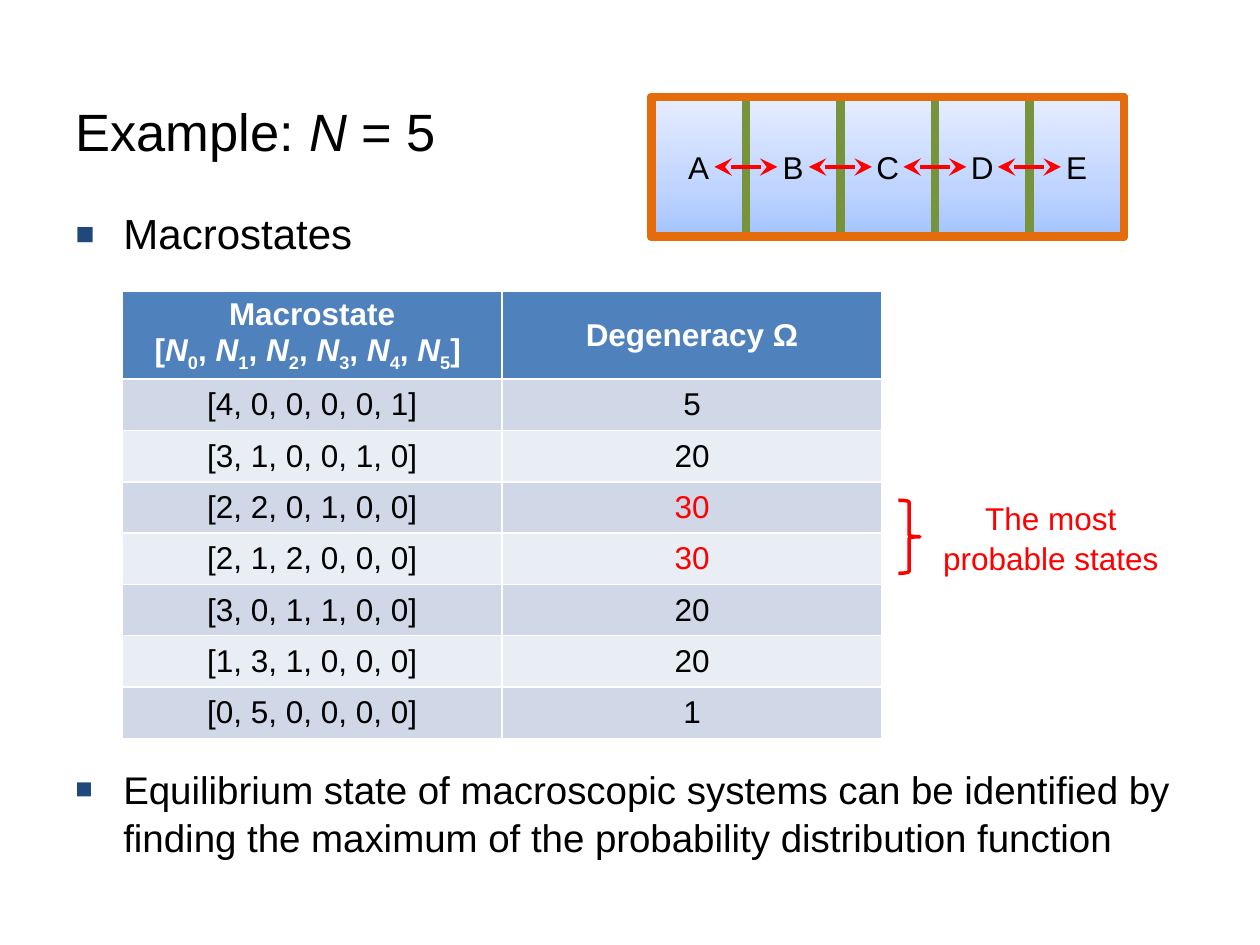
from copy import deepcopy
from dataclasses import dataclass

from lxml import etree
from pptx import Presentation
from pptx import util as u
from pptx.dml.color import RGBColor
from pptx.enum import shapes, text
from pptx.oxml import ns


@dataclass(frozen=True)
class Theme:
    font: str = "Arial"
    ink: str = "000000"
    white: str = "FFFFFF"
    accent: str = "FF0000"
    bullet: str = "1F497D"
    wall: str = "77933C"
    frame: str = "E46C0A"
    header: str = "4F81BD"
    bands: tuple = ("D0D8E8", "E9EDF4")
    gradient: tuple = ((0, "A4C4FF"), (0.35, "BFD4FF"), (1, "E6EEFF"))
    title_size: int = 30
    list_size: int = 24
    conclusion_size: int = 22
    label_size: int = 18
    wall_width: int = 5
    stroke_width: int = 2


def rgb(value):
    return RGBColor.from_string(value)


def add_element(parent, tag, **attributes):
    return etree.SubElement(parent, ns.qn(tag), **attributes)


class SlideBuilder:
    columns, rows = 100, 75

    def __init__(self, presentation, theme):
        self.theme = theme
        self.column = presentation.slide_width / self.columns
        self.row = presentation.slide_height / self.rows
        self.slide = presentation.slides.add_slide(presentation.slide_layouts[1])

    def box(self, left, top, width, height):
        return (u.Emu(round(left * self.column)), u.Emu(round(top * self.row)),
                u.Emu(round(width * self.column)), u.Emu(round(height * self.row)))

    def place(self, shape, area):
        shape.left, shape.top, shape.width, shape.height = self.box(*area)

    def format(self, paragraph, size, color=None, bold=False, align=text.PP_ALIGN.CENTER):
        paragraph.alignment = align
        for run in paragraph.runs:
            run.font.name = self.theme.font
            run.font.size = u.Pt(size)
            run.font.bold = bold
            run.font.color.rgb = rgb(color or self.theme.ink)

    def add_runs(self, paragraph, pieces):
        for piece in pieces:
            run = paragraph.add_run()
            run.text = piece
            run.font.italic = piece == "N"
            if piece.isdigit():
                run.font._element.set("baseline", "-25000")

    def title(self, area, pieces):
        shape = self.slide.shapes.title
        self.place(shape, area)
        frame = shape.text_frame
        frame.auto_size = text.MSO_AUTO_SIZE.NONE
        frame.vertical_anchor = text.MSO_ANCHOR.MIDDLE
        self.add_runs(frame.paragraphs[0], pieces)
        self.format(frame.paragraphs[0], self.theme.title_size, align=text.PP_ALIGN.LEFT)

    def bullet(self, shape, content, size):
        frame = shape.text_frame
        frame.word_wrap = True
        frame.auto_size = text.MSO_AUTO_SIZE.NONE
        frame.text = content
        paragraph = frame.paragraphs[0]
        paragraph.space_before = u.Pt(0)
        properties = paragraph._p.get_or_add_pPr()
        properties.set("marL", str(u.Inches(0.38)))
        properties.set("indent", str(-u.Inches(0.38)))
        color = add_element(properties, "a:buClr")
        add_element(color, "a:srgbClr", val=self.theme.bullet)
        add_element(properties, "a:buSzPct", val="75000")
        add_element(properties, "a:buFont", typeface=self.theme.font)
        add_element(properties, "a:buChar", char="■")
        self.format(paragraph, size, align=text.PP_ALIGN.LEFT)
        return paragraph

    def body(self, area, content):
        shape = self.slide.placeholders[1]
        self.place(shape, area)
        self.bullet(shape, content, self.theme.list_size)

    def conclusion(self, area, content):
        shape = self.slide.shapes.add_textbox(*self.box(*area))
        self.bullet(shape, content, self.theme.conclusion_size).line_spacing = 1.05

    def caption(self, area, content):
        frame = self.slide.shapes.add_textbox(*self.box(*area)).text_frame
        frame.word_wrap = True
        frame.text = content
        frame.paragraphs[0].line_spacing = 1.05
        self.format(frame.paragraphs[0], self.theme.label_size, self.theme.accent)

    def outline(self, kind, area, color, width):
        shape = self.slide.shapes.add_shape(kind, *self.box(*area))
        shape.shadow.inherit = False
        shape.fill.background()
        shape.line.color.rgb = rgb(color)
        shape.line.width = u.Pt(width)
        return shape

    def compartment(self, area, label):
        theme = self.theme
        shape = self.outline(shapes.MSO_SHAPE.RECTANGLE, area, theme.wall, theme.wall_width)
        shape.fill.gradient()
        shape.fill.gradient_angle = 90
        stops = shape._element.spPr.find(".//" + ns.qn("a:gsLst"))
        stops.append(deepcopy(stops[0]))
        for stop, (position, color) in zip(shape.fill.gradient_stops, theme.gradient):
            stop.position = position
            stop.color.rgb = rgb(color)
        frame = shape.text_frame
        frame.vertical_anchor = text.MSO_ANCHOR.MIDDLE
        frame.text = label
        self.format(frame.paragraphs[0], theme.label_size)

    def exchange_arrow(self, left, top, width):
        start_x, start_y, length, _ = self.box(left, top, width, 0)
        arrow = self.slide.shapes.add_connector(
            shapes.MSO_CONNECTOR.STRAIGHT, start_x, start_y, start_x + length, start_y)
        arrow.line.color.rgb = rgb(self.theme.accent)
        arrow.line.width = u.Pt(self.theme.stroke_width)
        line = arrow.line._get_or_add_ln()
        for end in ("a:headEnd", "a:tailEnd"):
            add_element(line, end, type="stealth", w="lg", len="lg")
        add_element(arrow._element.spPr, "a:effectLst")

    def chambers(self, area, labels):
        left, top, width, height = area
        pitch = width / len(labels)
        for index, label in enumerate(labels):
            self.compartment((left + index * pitch, top, pitch, height), label)
        for index in range(1, len(labels)):
            self.exchange_arrow(left + index * pitch - 2.5, top + height / 2, 5)
        self.outline(shapes.MSO_SHAPE.RECTANGLE, area, self.theme.frame, self.theme.wall_width)

    def fill_cell(self, cell, fill, color, bold=False):
        cell.fill.solid()
        cell.fill.fore_color.rgb = rgb(fill)
        cell.vertical_anchor = text.MSO_ANCHOR.MIDDLE
        for paragraph in cell.text_frame.paragraphs:
            self.format(paragraph, self.theme.label_size, color, bold)

    def degeneracy_table(self, area, header_height, states):
        theme = self.theme
        table = self.slide.shapes.add_table(len(states) + 1, 2, *self.box(*area)).table
        table.rows[0].height = u.Emu(round(header_height * self.row))
        row_height = (area[3] - header_height) / len(states)
        macrostate, degeneracy = table.rows[0].cells
        macrostate.text = "Macrostate"
        pieces = ["["]
        for index in range(6):
            pieces += ["N", str(index), ", " if index < 5 else "] "]
        self.add_runs(macrostate.text_frame.add_paragraph(), pieces)
        degeneracy.text = "Degeneracy Ω"
        for cell in (macrostate, degeneracy):
            self.fill_cell(cell, theme.header, theme.white, bold=True)
        largest = max(count for _, count in states)
        for index, (state, count) in enumerate(states):
            row = table.rows[index + 1]
            row.height = u.Emu(round(row_height * self.row))
            row.cells[0].text = str(state)
            row.cells[1].text = str(count)
            band = theme.bands[index % 2]
            self.fill_cell(row.cells[0], band, theme.ink)
            self.fill_cell(row.cells[1], band, theme.accent if count == largest else theme.ink)


def main():
    presentation = Presentation()
    presentation.slide_width, presentation.slide_height = u.Inches(10), u.Inches(7.5)
    theme = Theme()
    builder = SlideBuilder(presentation, theme)
    builder.title((5, 5, 89.2, 10.8), ["Example: ", "N", " = 5"])
    builder.body((5, 16, 89.2, 52.5), "Macrostates")
    builder.chambers((51.7, 7.7, 37.5, 11.1), "ABCDE")
    states = [([4, 0, 0, 0, 0, 1], 5), ([3, 1, 0, 0, 1, 0], 20),
              ([2, 2, 0, 1, 0, 0], 30), ([2, 1, 2, 0, 0, 0], 30),
              ([3, 0, 1, 1, 0, 0], 20), ([1, 3, 1, 0, 0, 0], 20),
              ([0, 5, 0, 0, 0, 0], 1)]
    builder.degeneracy_table((9.7, 23.1, 60.3, 35.4), 6.9, states)
    builder.outline(shapes.MSO_SHAPE.RIGHT_BRACE, (71.3, 39.7, 1.7, 5.8),
                    theme.accent, theme.stroke_width)
    builder.caption((73.8, 39, 19.2, 7.1), "The most probable states")
    builder.conclusion((5, 60.1, 89.2, 8.4),
                       "Equilibrium state of macroscopic systems can be identified by "
                       "finding the maximum of the probability distribution function")
    presentation.save("out.pptx")


if __name__ == "__main__":
    main()
